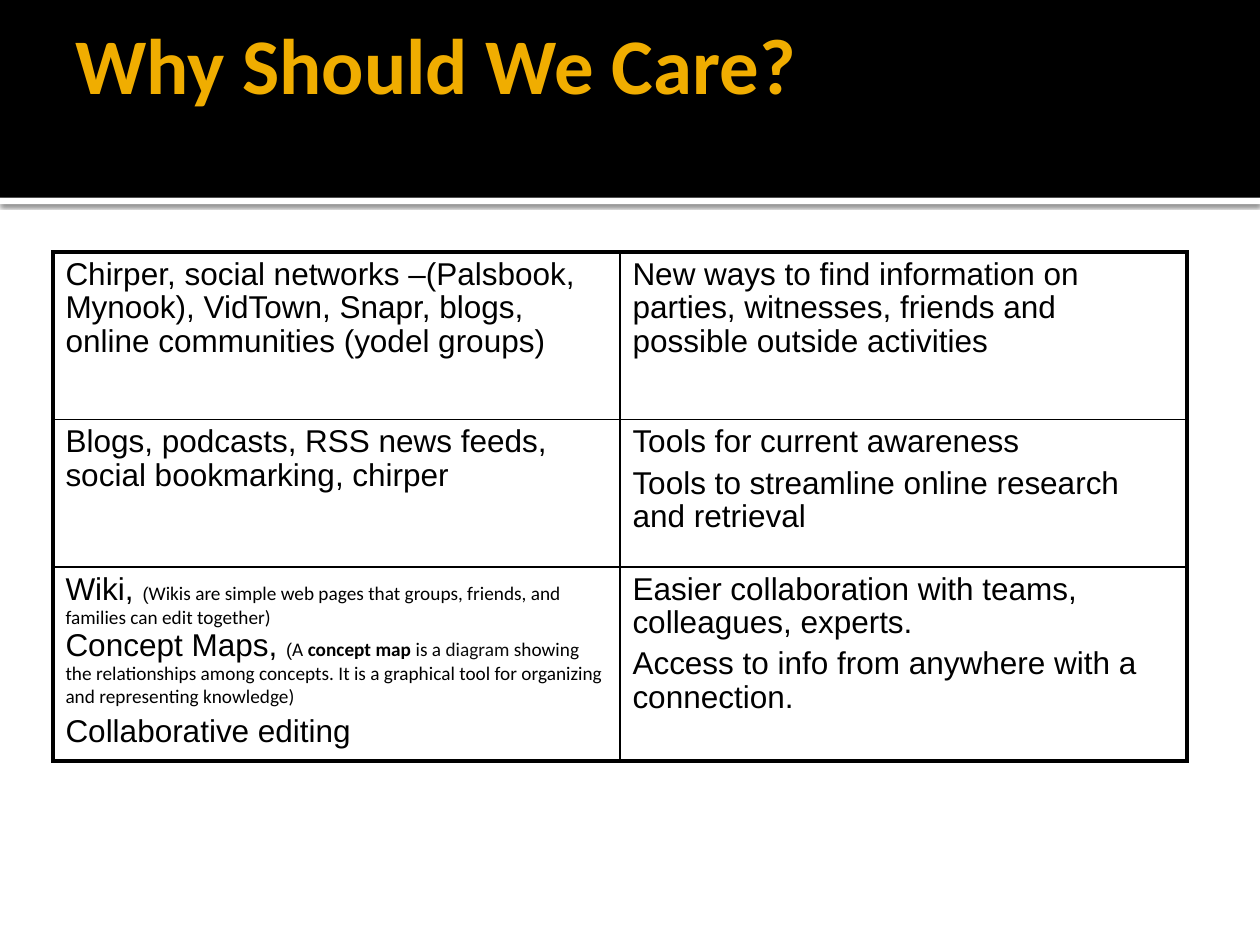
from copy import deepcopy
from dataclasses import dataclass
from pptx import Presentation
from pptx.dml.color import RGBColor
from pptx.enum.shapes import MSO_SHAPE
from pptx.enum.text import MSO_ANCHOR
from pptx.oxml import parse_xml
from pptx.oxml.ns import nsdecls
from pptx.util import Inches, Pt


@dataclass
class Theme:
    black: str = "000000"
    white: str = "FFFFFF"
    gold: str = "F0AD00"
    soft: str = "0D0D0D"
    sans: str = "Arial"
    head: str = "Calibri"
    title: float = 45
    body: float = 18
    note: float = 11
    mark: float = 10.5
    thick: float = 2.25
    thin: float = 1


class Deck:
    def __init__(self, theme, slide):
        self.theme = theme
        self.slide = slide

    def style(self, run, name, size, color, bold=False):
        props = {"name": name, "size": Pt(size), "bold": bold}
        for key, val in props.items():
            setattr(run.font, key, val)
        run.font.color.rgb = RGBColor.from_string(color)

    def bar(self, top, height, color, shade=False):
        bar = self.slide.shapes.add_shape(
            MSO_SHAPE.RECTANGLE, 0, Inches(top), Inches(10), Inches(height))
        bar.shadow.inherit = False
        bar.fill.solid()
        bar.fill.fore_color.rgb = RGBColor.from_string(color)
        bar.line.fill.background()
        if shade:
            glow = parse_xml(
                f'<a:outerShdw {nsdecls("a")} blurRad="{Pt(2.5)}" dist="{Pt(0.8)}" '
                f'dir="5400000" rotWithShape="0"><a:srgbClr val="{self.theme.black}">'
                '<a:alpha val="60000"/></a:srgbClr></a:outerShdw>')
            bar._element.spPr.find("{*}effectLst").append(glow)

    def title(self, text):
        box = self.slide.shapes.add_textbox(Inches(0.5), 0, Inches(8), Inches(1))
        frame = box.text_frame
        props = {"word_wrap": True, "vertical_anchor": MSO_ANCHOR.MIDDLE,
                 "margin_left": Inches(0.1), "margin_right": Inches(0.05)}
        for key, val in props.items():
            setattr(frame, key, val)
        run = frame.paragraphs[0].add_run()
        run.text = text
        self.style(run, self.theme.head, self.theme.title, self.theme.gold, True)

    def prose(self, para, parts):
        look = self.theme
        looks = {
            "body": (look.sans, look.body, look.black),
            "mark": (look.sans, look.mark, look.black),
            "note": (look.head, look.note, look.black),
            "bold": (look.head, look.note, look.black, True),
            "soft": (look.head, look.note, look.soft),
        }
        for kind, text in parts:
            if kind == "break":
                para.add_line_break()
                para._p[-1].append(deepcopy(run._r.rPr))
                continue
            run = para.add_run()
            run.text = text
            self.style(run, *looks[kind])

    def edge(self, cell, side, width):
        cell._tc.get_or_add_tcPr().append(parse_xml(
            f'<a:ln{side} {nsdecls("a")} w="{Pt(width)}"><a:solidFill>'
            f'<a:srgbClr val="{self.theme.black}"/></a:solidFill></a:ln{side}>'))

    def table(self, left, top, wide, highs, rows):
        count = len(rows[0])
        grid = self.slide.shapes.add_table(
            len(rows), count, Inches(left), Inches(top),
            Inches(wide * count), Inches(sum(highs))).table
        grid.first_row = grid.horz_banding = False
        for col in grid.columns:
            col.width = Inches(wide)
        for i, row in enumerate(rows):
            grid.rows[i].height = Inches(highs[i])
            for j, paras in enumerate(row):
                cell = grid.cell(i, j)
                outer = {"L": j == 0, "R": j == count - 1,
                         "T": i == 0, "B": i == len(rows) - 1}
                for side, out in outer.items():
                    self.edge(cell, side, self.theme.thick if out else self.theme.thin)
                cell.fill.background()
                frame = cell.text_frame
                for k, parts in enumerate(paras):
                    para = frame.add_paragraph() if k else frame.paragraphs[0]
                    para.line_spacing = 0.95
                    para.space_before = Pt(4.5 if k else 0)
                    self.prose(para, [("body", parts)] if isinstance(parts, str) else parts)


WIKI = [
    ("body", "Wiki, "), ("mark", "("),
    ("note", "Wikis are simple web pages that groups, friends, and families can edit together)"),
    ("break", ""),
    ("body", "Concept Maps, "), ("mark", "("), ("note", "A "),
    ("bold", "concept map"), ("note", " is a "), ("soft", "diagram"),
    ("note", " showing the relationships among concepts. It is a graphical tool "
             "for organizing and representing knowledge)"),
]
ROWS = [
    [["Chirper, social networks –(Palsbook, Mynook), VidTown, Snapr, blogs, "
      "online communities (yodel groups)"],
     ["New ways to find information on parties, witnesses, friends and "
      "possible outside activities"]],
    [["Blogs, podcasts, RSS news feeds, social bookmarking, chirper"],
     ["Tools for current awareness",
      "Tools to streamline online research and retrieval"]],
    [[WIKI, "Collaborative editing"],
     ["Easier collaboration with teams, colleagues, experts.",
      "Access to info from anywhere with a connection."]],
]


def main():
    show = Presentation()
    show.slide_width, show.slide_height = Inches(10), Inches(7.5)
    look = Theme()
    deck = Deck(look, show.slides.add_slide(show.slide_layouts[6]))
    deck.bar(1.57, 0.05, look.white, shade=True)
    deck.bar(0, 1.57, look.black)
    deck.title("Why Should We Care?")
    deck.table(0.42, 2, 4.5, [1.33, 1.17, 1.5], ROWS)
    show.save("out.pptx")


if __name__ == "__main__":
    main()
